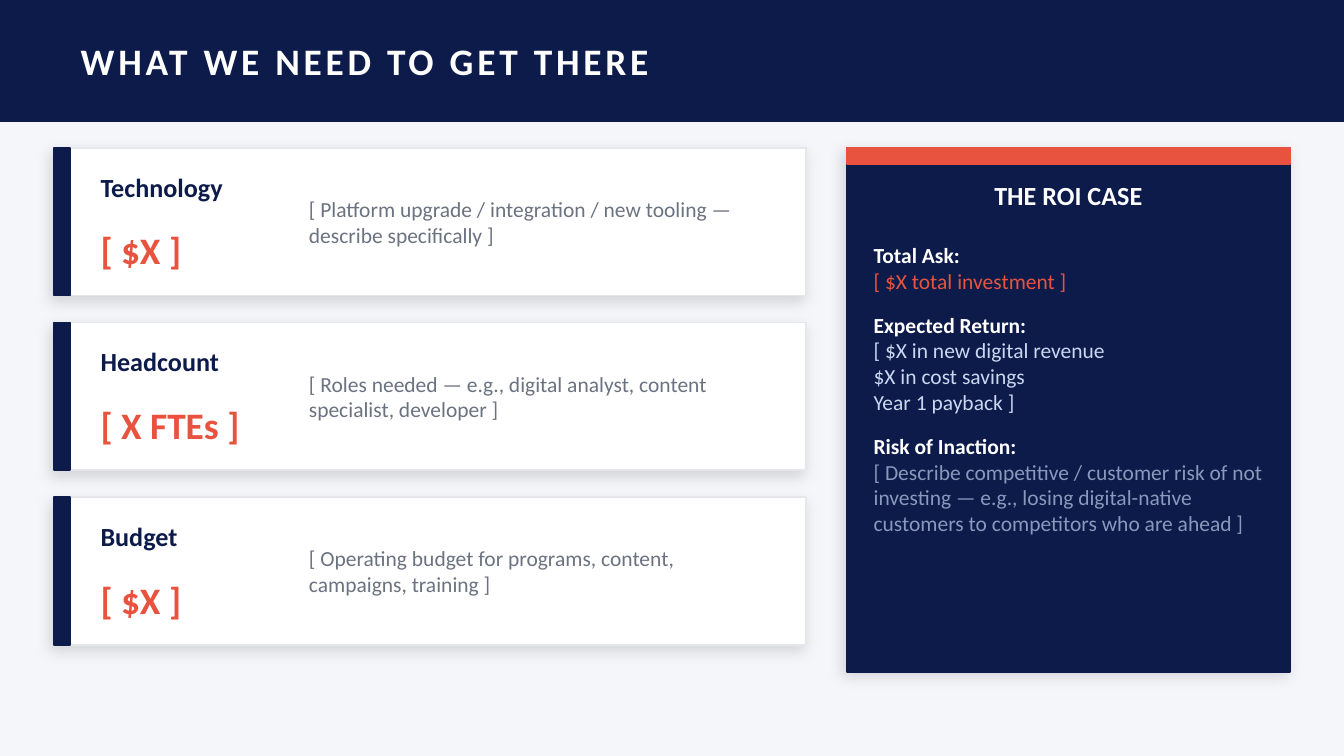
"""Build the investment ask slide: three resource cards beside an ROI panel."""
from pptx import Presentation
from pptx.dml.color import RGBColor
from pptx.enum.shapes import MSO_SHAPE
from pptx.enum.text import MSO_ANCHOR, MSO_AUTO_SIZE, PP_ALIGN
from pptx.oxml import parse_xml
from pptx.oxml.ns import nsdecls, qn
from pptx.util import Pt

RECTANGLE = MSO_SHAPE.RECTANGLE
TOP, MIDDLE = MSO_ANCHOR.TOP, MSO_ANCHOR.MIDDLE
LEFT, CENTER = PP_ALIGN.LEFT, PP_ALIGN.CENTER
NO_FIT = MSO_AUTO_SIZE.NONE

HEADLINE = "WHAT WE NEED TO GET THERE"
ASKS = [
    ("Technology", "[ $X ]",
     "[ Platform upgrade / integration / new tooling — describe specifically ]"),
    ("Headcount", "[ X FTEs ]",
     "[ Roles needed — e.g., digital analyst, content specialist, developer ]"),
    ("Budget", "[ $X ]",
     "[ Operating budget for programs, content, campaigns, training ]"),
]
ROI_HEADING = "THE ROI CASE"
ROI_CASE = [
    ("Total Ask:", "coral", ["[ $X total investment ]"]),
    ("Expected Return:", "ice",
     ["[ $X in new digital revenue", "$X in cost savings", "Year 1 payback ]"]),
    ("Risk of Inaction:", "slate",
     ["[ Describe competitive / customer risk of not investing — e.g., "
      "losing digital-native customers to competitors who are ahead ]"]),
]

COLORS = {
    "navy": "0D1B4B", "coral": "E8533F", "white": "FFFFFF", "page": "F5F6FA",
    "border": "E5E7EB", "gray": "6B7280", "ice": "C8D8F0", "slate": "8899BB",
}
FONT = "Calibri"
PX = 4572
SLIDE_W, SLIDE_H = 2000, 1125
HEADER_H = 180
CONTENT_TOP = 220
CARD_X, CARD_W, CARD_H, CARD_GAP = 80, 1120, 220, 40
PANEL_X, PANEL_W, PANEL_H, PANEL_PAD = 1260, 660, 780, 20
ACCENT = 24
BODY_SIZE = 11.5


def color(name):
    return RGBColor.from_string(COLORS[name])


def place(shape, *box):
    shape.left, shape.top, shape.width, shape.height = (n * PX for n in box)


def add_block(slide, box, fill, line=None, raised=False):
    block = slide.shapes.add_shape(RECTANGLE, *(n * PX for n in box))
    block.fill.solid()
    block.fill.fore_color.rgb = color(fill)
    block.line.color.rgb = color(line or fill)
    block.line.width = Pt(1)
    block.shadow.inherit = False
    if raised:
        block.element.spPr.find(qn("a:effectLst")).append(parse_xml(
            f'<a:outerShdw {nsdecls("a")} blurRad="{Pt(8)}" dist="{Pt(3)}" '
            'dir="8100000" algn="bl" rotWithShape="0"><a:srgbClr val="000000">'
            '<a:alpha val="12000"/></a:srgbClr></a:outerShdw>'))
    return block


def set_frame(shape, anchor):
    frame = shape.text_frame
    frame.word_wrap = True
    frame.auto_size = NO_FIT
    frame.vertical_anchor = anchor
    return frame


def write(paragraph, text, size, tint, bold=False, align=LEFT):
    paragraph.text = text
    paragraph.alignment = align
    font = paragraph.runs[0].font
    font.name, font.size, font.bold = FONT, Pt(size), bold
    font.color.rgb = color(tint)


def add_label(slide, box, *style, **options):
    label = slide.shapes.add_textbox(*(n * PX for n in box))
    write(set_frame(label, MIDDLE).paragraphs[0], *style, **options)


def add_header(slide):
    title = slide.shapes.title
    place(title, 100, 0, 1800, HEADER_H)
    headline = set_frame(title, MIDDLE).paragraphs[0]
    write(headline, HEADLINE, 20, "white", bold=True)
    headline.runs[0].font._element.set("spc", "200")
    band = add_block(slide, (0, 0, SLIDE_W, HEADER_H), "navy")
    title.element.addprevious(band.element)


def add_card(slide, top, need, amount, detail):
    add_block(slide, (CARD_X, top, CARD_W, CARD_H), "white", "border", raised=True)
    add_block(slide, (CARD_X, top, ACCENT, CARD_H), "navy")
    add_label(slide, (CARD_X + 50, top + 16, 280, 84), need, 14, "navy", bold=True)
    add_label(slide, (CARD_X + 50, top + 110, 280, 84), amount, 20, "coral", bold=True)
    add_label(slide, (CARD_X + 360, top + 30, 730, 160), detail, BODY_SIZE, "gray")


def add_roi_panel(slide, body):
    text_x, text_w = PANEL_X + PANEL_PAD, PANEL_W - 2 * PANEL_PAD
    panel = add_block(slide, (PANEL_X, CONTENT_TOP, PANEL_W, PANEL_H), "navy", raised=True)
    add_block(slide, (PANEL_X, CONTENT_TOP, PANEL_W, ACCENT), "coral")
    add_label(slide, (text_x, CONTENT_TOP + 20, text_w, 100),
              ROI_HEADING, 14, "white", bold=True, align=CENTER)
    panel.element.addnext(body.element)
    place(body, text_x, CONTENT_TOP + 130, text_w, 620)
    frame = set_frame(body, TOP)
    lines = []
    for index, (heading, tint, details) in enumerate(ROI_CASE):
        lines.append((heading, "white", True, 9.75 if index else 0))
        lines += [(detail, tint, False, 0) for detail in details]
    for index, (text, tint, bold, gap) in enumerate(lines):
        paragraph = frame.add_paragraph() if index else frame.paragraphs[0]
        write(paragraph, text, BODY_SIZE, tint, bold)
        paragraph.space_before = Pt(gap)
        properties = paragraph._p.get_or_add_pPr()
        properties.set("marL", "0")
        properties.set("indent", "0")
        properties.append(parse_xml(f'<a:buNone {nsdecls("a")}/>'))


def main():
    deck = Presentation()
    deck.slide_width, deck.slide_height = SLIDE_W * PX, SLIDE_H * PX
    slide = deck.slides.add_slide(deck.slide_layouts[1])
    slide.background.fill.solid()
    slide.background.fill.fore_color.rgb = color("page")
    add_header(slide)
    for index, ask in enumerate(ASKS):
        add_card(slide, CONTENT_TOP + index * (CARD_H + CARD_GAP), *ask)
    add_roi_panel(slide, slide.placeholders[1])
    deck.save("out.pptx")


if __name__ == "__main__":
    main()
